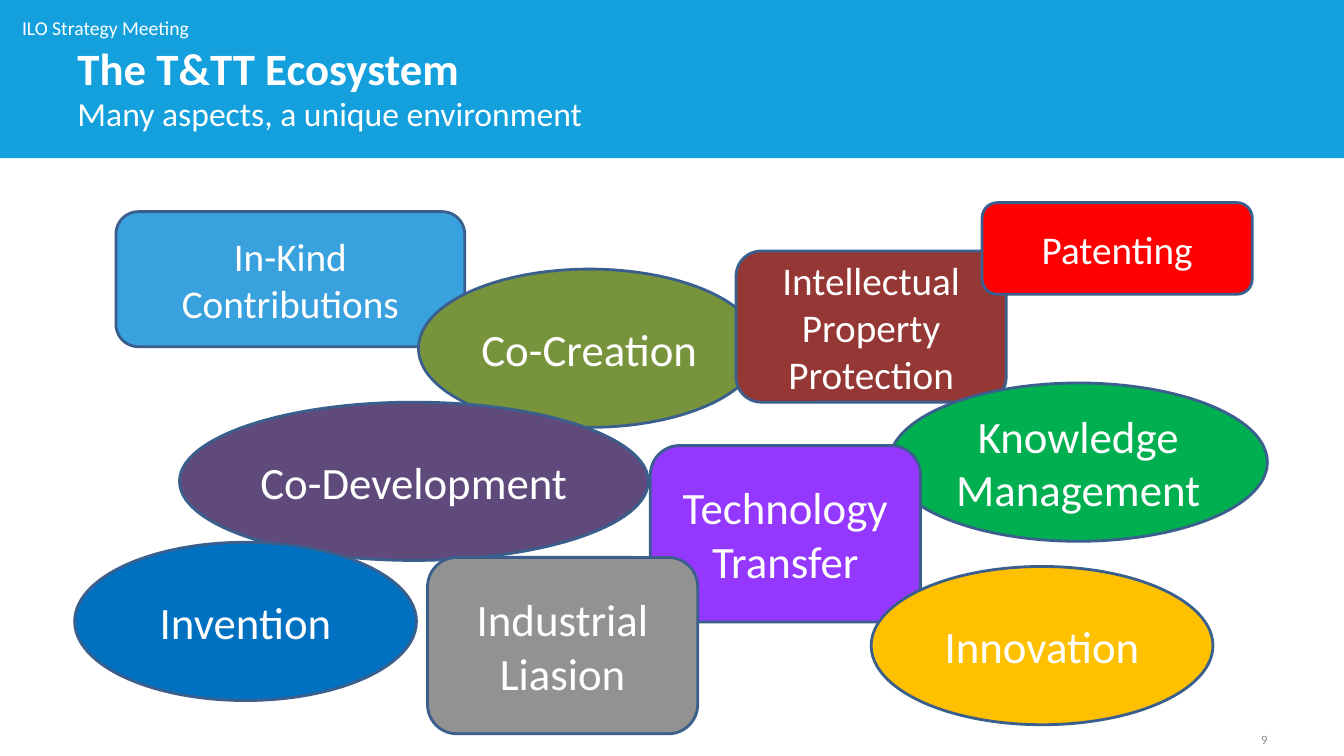
"""Build the T&TT Ecosystem slide: a header band above overlapping topic shapes."""

from dataclasses import dataclass

import pptx
import pptx.dml.color
import pptx.enum.shapes
import pptx.enum.text
import pptx.presentation
import pptx.slide
import pptx.text.text
import pptx.util

RGB = pptx.dml.color.RGBColor
Shape = pptx.enum.shapes.MSO_SHAPE
Anchor = pptx.enum.text.MSO_ANCHOR
Align = pptx.enum.text.PP_ALIGN

EMU_PER_PX = 9144
FONT = "Calibri"
WHITE = RGB(0xFF, 0xFF, 0xFF)
BAND_BLUE = RGB(0x13, 0xA0, 0xDD)
OUTLINE_BLUE = RGB(0x3A, 0x5F, 0x8C)
NUMBER_GREY = RGB(0x8C, 0x8C, 0x8C)
SKY = RGB(0x39, 0xA1, 0xDD)
OLIVE = RGB(0x77, 0x93, 0x3C)
PLUM = RGB(0x60, 0x4A, 0x7B)
BRICK = RGB(0x95, 0x37, 0x35)
RED = RGB(0xFF, 0x00, 0x00)
GREEN = RGB(0x00, 0xB0, 0x50)
VIOLET = RGB(0x94, 0x37, 0xFF)
BLUE = RGB(0x00, 0x70, 0xC0)
AMBER = RGB(0xFF, 0xC0, 0x00)
GREY = RGB(0x92, 0x92, 0x92)


@dataclass(frozen=True)
class Box:
    """A rectangle in px."""

    left: int
    top: int
    width: int
    height: int

    def emu(self) -> tuple[pptx.util.Emu, ...]:
        """Return the four lengths in EMU."""
        lengths = (self.left, self.top, self.width, self.height)
        return tuple(pptx.util.Emu(length * EMU_PER_PX) for length in lengths)


@dataclass(frozen=True)
class Label:
    """A piece of header or footer text."""

    text: str
    box: Box
    size: int
    color: RGB = WHITE
    bold: bool = False
    wrap: bool = True
    anchor: Anchor = Anchor.TOP
    align: Align = Align.LEFT


@dataclass(frozen=True)
class Topic:
    """One aspect of the ecosystem."""

    text: str
    outline: Shape
    box: Box
    fill: RGB
    size: int = 32


BAND = Box(0, 0, 1333, 157)

LABELS = (
    Label("ILO Strategy Meeting", Box(12, 11, 188, 34), 14, wrap=False),
    Label("9", Box(956, 706, 311, 40), 9, NUMBER_GREY,
          anchor=Anchor.BOTTOM, align=Align.RIGHT),
    Label("The T&TT Ecosystem", Box(67, 38, 1041, 61), 32, bold=True,
          anchor=Anchor.BOTTOM),
    Label("Many aspects, a unique environment", Box(67, 87, 1041, 65), 24),
)

TOPICS = (
    Topic("In-Kind\vContributions", Shape.ROUNDED_RECTANGLE,
          Box(115, 210, 346, 134), SKY, 28),
    Topic("Co-Creation", Shape.OVAL, Box(415, 267, 339, 157), OLIVE),
    Topic("Co-Development", Shape.OVAL, Box(178, 399, 465, 157), PLUM),
    Topic("Intellectual\vProperty\vProtection", Shape.ROUNDED_RECTANGLE,
          Box(730, 249, 268, 150), BRICK, 28),
    Topic("Patenting", Shape.ROUNDED_RECTANGLE, Box(974, 201, 268, 91), RED, 28),
    Topic("Knowledge\vManagement", Shape.OVAL, Box(882, 380, 375, 157), GREEN),
    Topic("Technology\nTransfer", Shape.ROUNDED_RECTANGLE,
          Box(645, 442, 268, 175), VIOLET),
    Topic("Invention", Shape.OVAL, Box(74, 538, 339, 157), BLUE),
    Topic("Innovation", Shape.OVAL, Box(864, 562, 339, 157), AMBER),
    Topic("Industrial\nLiasion", Shape.ROUNDED_RECTANGLE,
          Box(424, 553, 268, 175), GREY),
)


def write(frame: pptx.text.text.TextFrame, text: str, size: int, color: RGB,
          anchor: Anchor, align: Align, bold: bool = False,
          wrap: bool = True) -> None:
    """Fill a text frame with evenly formatted paragraphs."""
    frame.text = text
    frame.word_wrap = wrap
    frame.vertical_anchor = anchor
    for paragraph in frame.paragraphs:
        paragraph.alignment = align
        paragraph.font.name = FONT
        paragraph.font.size = pptx.util.Pt(size)
        paragraph.font.bold = bold
        paragraph.font.color.rgb = color


def draw_band(slide: pptx.slide.Slide) -> None:
    """Draw the header band."""
    band = slide.shapes.add_shape(Shape.RECTANGLE, *BAND.emu())
    band.shadow.inherit = False
    band.fill.solid()
    band.fill.fore_color.rgb = BAND_BLUE
    band.line.fill.background()


def draw_label(slide: pptx.slide.Slide, label: Label) -> None:
    """Draw one header or footer text."""
    frame = slide.shapes.add_textbox(*label.box.emu()).text_frame
    write(frame, label.text, label.size, label.color, label.anchor,
          label.align, label.bold, label.wrap)


def draw_topic(slide: pptx.slide.Slide, topic: Topic) -> None:
    """Draw one outlined topic shape with centred text."""
    bubble = slide.shapes.add_shape(topic.outline, *topic.box.emu())
    bubble.shadow.inherit = False
    bubble.fill.solid()
    bubble.fill.fore_color.rgb = topic.fill
    bubble.line.color.rgb = OUTLINE_BLUE
    bubble.line.width = pptx.util.Pt(2)
    write(bubble.text_frame, topic.text, topic.size, WHITE,
          Anchor.MIDDLE, Align.CENTER)


def main() -> None:
    """Build and save the slide."""
    deck: pptx.presentation.Presentation = pptx.Presentation()
    deck.slide_width = pptx.util.Emu(1333 * EMU_PER_PX)
    deck.slide_height = pptx.util.Emu(750 * EMU_PER_PX)
    slide = deck.slides.add_slide(deck.slide_layouts[6])
    draw_band(slide)
    for label in LABELS:
        draw_label(slide, label)
    for topic in TOPICS:
        draw_topic(slide, topic)
    deck.save("out.pptx")


if __name__ == "__main__":
    main()
